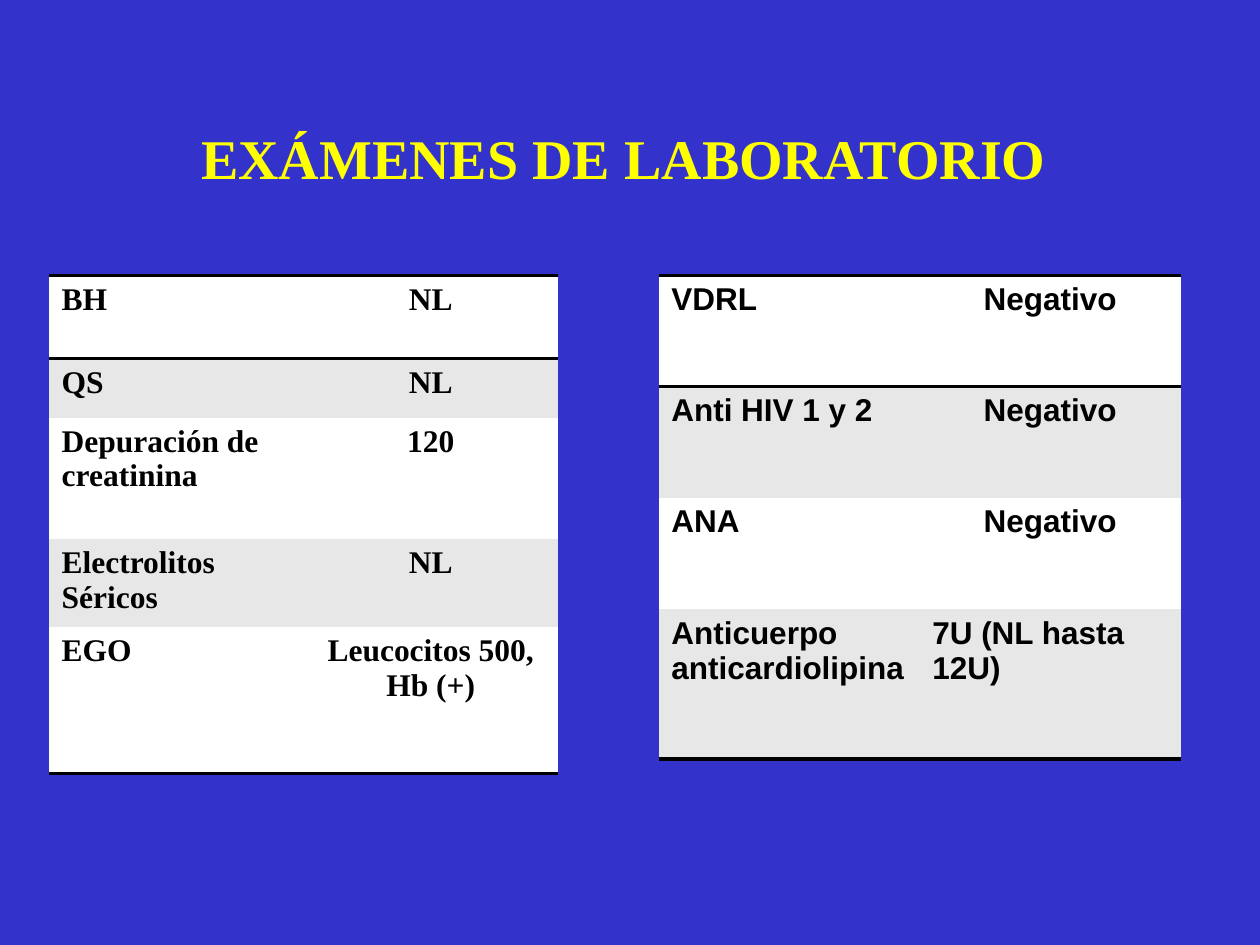
from pptx import Presentation, util as u
from pptx.dml.color import RGBColor
from pptx.enum import text as t
from pptx.oxml import parse_xml
from pptx.oxml.ns import nsdecls, qn

# Content
TITLE = "EXÁMENES DE LABORATORIO"
LEFT = [
    ("BH", "NL"),
    ("QS", "NL"),
    ("Depuración de creatinina", "120"),
    ("Electrolitos Séricos", "NL"),
    ("EGO", "Leucocitos 500, Hb (+)"),
]
RIGHT = [
    ("VDRL", "Negativo"),
    ("Anti HIV 1 y 2", "Negativo"),
    ("ANA", "Negativo"),
    ("Anticuerpo anticardiolipina", "7U (NL hasta 12U)"),
]

# Lengths in cm
TOP = 5.56
TABLES = [
    dict(rows=LEFT, x=0.99, col=5.13, highs=[1.67, 1.19, 2.44, 1.67, 2.95],
         font="Times New Roman"),
    dict(rows=RIGHT, x=13.28, col=5.26, highs=[2.24] * 3 + [3.02],
         font="Arial", plain={(3, 1)}),
]

THEME = dict(back="3333CC", title="FFFF00", ink="000000",
             bands=("FFFFFF", "E7E7E7"), serif="Times New Roman",
             head=32, body=18, rule=2)
NO_STYLE = "{2D5ABB26-0587-4C30-8999-92F81FD0307C}"


def paint(fill, color):
    fill.solid()
    fill.fore_color.rgb = RGBColor.from_string(color)


def write(frame, words, *, font, size, color, center=False):
    frame.word_wrap = True
    para = frame.paragraphs[0]
    para.alignment = t.PP_ALIGN.CENTER if center else t.PP_ALIGN.LEFT
    run = para.add_run()
    run.text = words
    run.font.name, run.font.size, run.font.bold = font, u.Pt(size), True
    run.font.color.rgb = RGBColor.from_string(color)


def edge(cell, ruled):
    """Rule the named sides (T, B) and clear the others."""
    props = cell._tc.get_or_add_tcPr()
    for side in "LRTB":
        fill = "<a:noFill/>"
        if side in ruled:
            fill = f'<a:solidFill><a:srgbClr val="{THEME["ink"]}"/></a:solidFill>'
        props.append(parse_xml(
            f'<a:ln{side} {nsdecls("a")} w="{u.Pt(THEME["rule"])}">{fill}</a:ln{side}>'))


def draw(slide, rows, x, col, highs, font, plain=()):
    table = slide.shapes.add_table(
        len(rows), 2, u.Cm(x), u.Cm(TOP), u.Cm(2 * col), u.Cm(sum(highs))).table
    table._tbl.tblPr.find(qn("a:tableStyleId")).text = NO_STYLE
    for part in table.columns:
        part.width = u.Cm(col)
    for r, (row, high) in enumerate(zip(rows, highs)):
        table.rows[r].height = u.Cm(high)
        # Rules above and below the first row, and below the last
        ruled = {0: "TB", 1: "T", len(rows) - 1: "B"}.get(r, "")
        for c, words in enumerate(row):
            cell = table.cell(r, c)
            edge(cell, ruled)
            paint(cell.fill, THEME["bands"][r % 2])
            write(cell.text_frame, words, font=font, size=THEME["body"],
                  color=THEME["ink"], center=c == 1 and (r, c) not in plain)


def main():
    deck = Presentation()
    deck.slide_width, deck.slide_height = u.Cm(25.4), u.Cm(19.05)
    slide = deck.slides.add_slide(deck.slide_layouts[6])
    paint(slide.background.fill, THEME["back"])

    # Title
    box = slide.shapes.add_textbox(u.Cm(1.78), u.Cm(1.57), u.Cm(21.59), u.Cm(3.18))
    box.text_frame.vertical_anchor = t.MSO_ANCHOR.MIDDLE
    write(box.text_frame, TITLE, font=THEME["serif"], size=THEME["head"],
          color=THEME["title"], center=True)

    # Result tables
    for item in TABLES:
        draw(slide, **item)
    deck.save("out.pptx")


if __name__ == "__main__":
    main()
